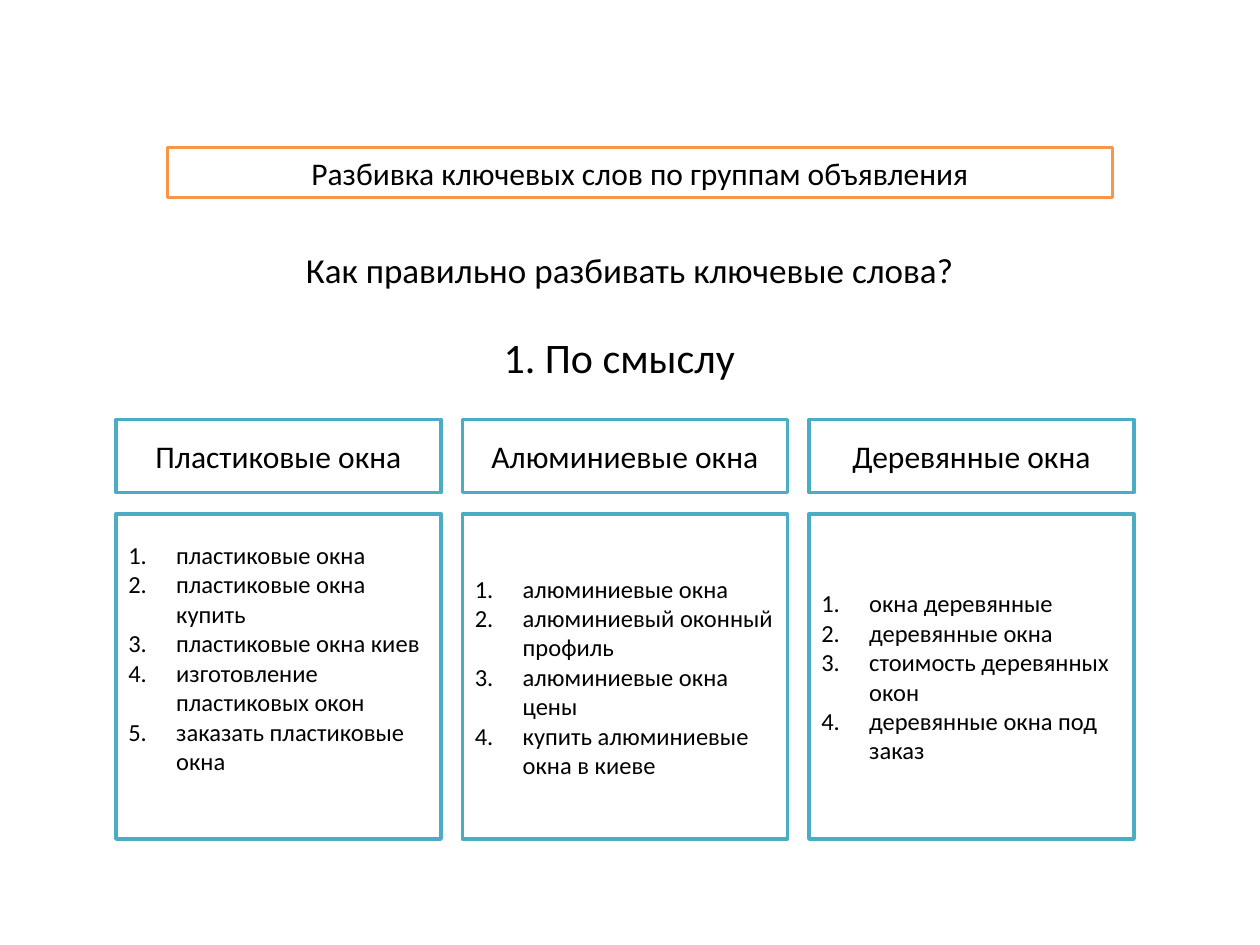
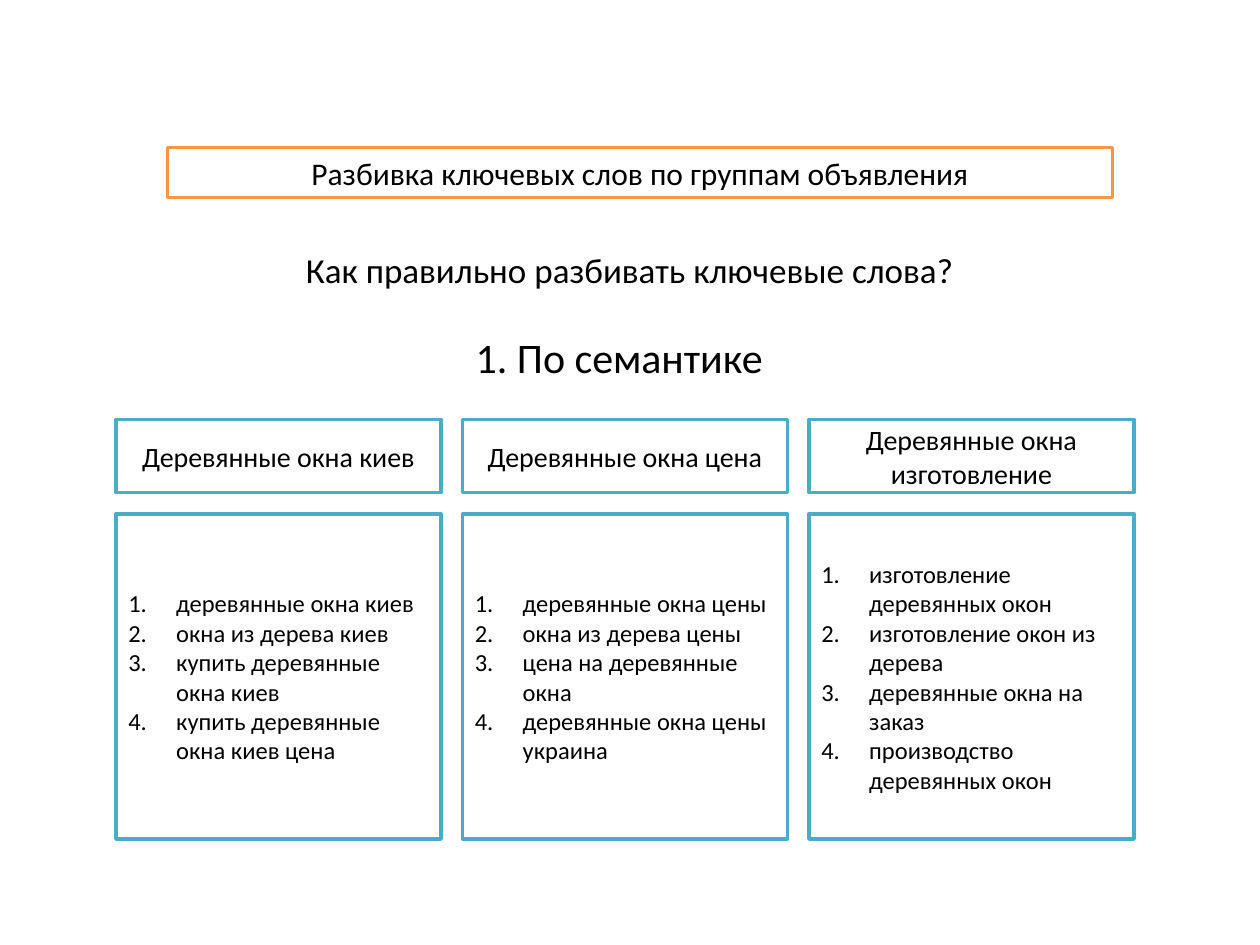
"""Build two slides on sorting keywords into ad groups."""
from dataclasses import dataclass

from lxml.etree import SubElement
from pptx import Presentation
from pptx.dml.color import RGBColor
from pptx.enum.shapes import MSO_SHAPE
from pptx.enum.text import MSO_ANCHOR, MSO_AUTO_SIZE, PP_ALIGN
from pptx.oxml.ns import qn
from pptx.util import Inches, Pt


@dataclass(frozen=True)
class Theme:
    font: str = "Calibri"
    ink: str = "000000"
    paper: str = "FFFFFF"
    orange: str = "F79646"
    teal: str = "4BACC6"
    line: float = 2
    title: int = 18
    query: int = 20
    topic: int = 24
    item: int = 14


THEME = Theme()
TITLE = "Разбивка ключевых слов по группам объявления"
QUERY = "Как правильно разбивать ключевые слова?"
LEFT, WIDTH, STEP = 0.92, 2.58, 2.75
SLIDES = [
    ("1. По смыслу", 18, [
        ("Пластиковые окна", [
            "пластиковые окна", "пластиковые окна купить",
            "пластиковые окна киев", "изготовление пластиковых окон",
            "заказать пластиковые окна"], 0.35),
        ("Алюминиевые окна", [
            "алюминиевые окна", "алюминиевый оконный профиль",
            "алюминиевые окна цены", "купить алюминиевые окна в киеве"], 0.05),
        ("Деревянные окна", [
            "окна деревянные", "деревянные окна",
            "стоимость деревянных окон", "деревянные окна под заказ"], 0.05),
    ]),
    ("1. По семантике", 16, [
        ("Деревянные окна киев", [
            "деревянные окна киев", "окна из дерева киев",
            "купить деревянные окна киев",
            "купить деревянные окна киев цена"], 0.05),
        ("Деревянные окна цена", [
            "деревянные окна цены", "окна из дерева цены",
            "цена на деревянные окна", "деревянные окна цены украина"], 0.05),
        ("Деревянные окна изготовление", [
            "изготовление деревянных окон", "изготовление окон из дерева",
            "деревянные окна на заказ", "производство деревянных окон"], 0.05),
    ]),
]


def write(frame, *lines, size, align=PP_ALIGN.CENTER, anchor=MSO_ANCHOR.TOP,
          count=False, foot=0.05, grow=False):
    frame.word_wrap = True
    frame.vertical_anchor = anchor
    frame.margin_bottom = Inches(foot)
    frame.auto_size = MSO_AUTO_SIZE.SHAPE_TO_FIT_TEXT if grow else MSO_AUTO_SIZE.NONE
    for i, line in enumerate(lines):
        para = frame.add_paragraph() if i else frame.paragraphs[0]
        para.alignment = align
        run = para.add_run()
        run.text = line
        run.font.name = THEME.font
        run.font.size = Pt(size)
        run.font.color.rgb = RGBColor.from_string(THEME.ink)
        if count:
            props = para._p.get_or_add_pPr()
            props.set("marL", str(Inches(0.38)))
            props.set("indent", str(-Inches(0.38)))
            SubElement(props, qn("a:buFont"), typeface="+mj-lt")
            SubElement(props, qn("a:buAutoNum"), type="arabicPeriod")


class Deck:
    def __init__(self, theme):
        self.theme = theme
        self.file = Presentation()
        self.file.slide_width = Inches(10)
        self.file.slide_height = Inches(7.5)
        self.slide = None

    def page(self):
        self.slide = self.file.slides.add_slide(self.file.slide_layouts[6])

    def box(self, place, tint, *lines, **style):
        shape = self.slide.shapes.add_shape(MSO_SHAPE.RECTANGLE, *map(Inches, place))
        shape.shadow.inherit = False
        shape.fill.solid()
        shape.fill.fore_color.rgb = RGBColor.from_string(self.theme.paper)
        shape.line.color.rgb = RGBColor.from_string(tint)
        shape.line.width = Pt(self.theme.line)
        write(shape.text_frame, *lines, **style)

    def label(self, place, text, **style):
        shape = self.slide.shapes.add_textbox(*map(Inches, place))
        write(shape.text_frame, text, grow=True, **style)


def main():
    deck = Deck(THEME)
    for topic, size, groups in SLIDES:
        deck.page()
        deck.box((1.33, 1.17, 7.5, 0.4), THEME.orange, TITLE,
                 size=THEME.title, grow=True)
        deck.label((2.33, 1.92, 6.17, 0.44), QUERY,
                   size=THEME.query, align=PP_ALIGN.LEFT)
        deck.label((3.33, 2.58, 3.17, 0.51), topic, size=THEME.topic)
        for i, (head, words, foot) in enumerate(groups):
            left = LEFT + i * STEP
            deck.box((left, 3.33, WIDTH, 0.58), THEME.teal, head,
                     size=size, anchor=MSO_ANCHOR.MIDDLE)
            deck.box((left, 4.08, WIDTH, WIDTH), THEME.teal, *words,
                     size=THEME.item, align=PP_ALIGN.LEFT,
                     anchor=MSO_ANCHOR.MIDDLE, count=True, foot=foot)
    deck.file.save("out.pptx")


if __name__ == "__main__":
    main()
